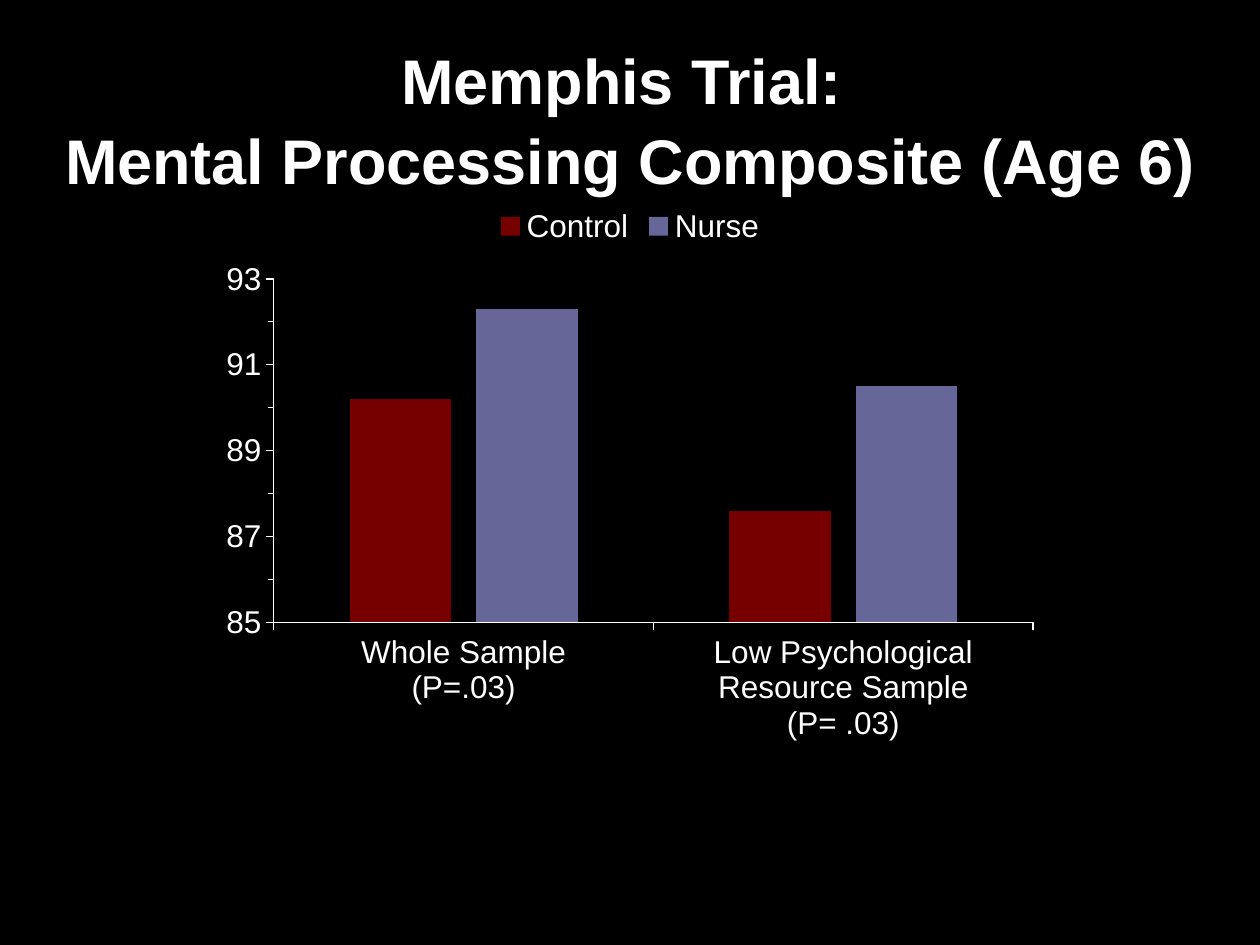
from dataclasses import dataclass

from lxml import etree
from pptx import Presentation
from pptx.chart.data import CategoryChartData
from pptx.dml.color import RGBColor
from pptx.enum.chart import XL_CHART_TYPE, XL_LEGEND_POSITION, XL_TICK_MARK
from pptx.enum.text import PP_ALIGN
from pptx.oxml.ns import qn
from pptx.util import Emu, Pt

PX = 914400 // 126  # one px in EMU
SLIDE_W, SLIDE_H = 1260, 945

BLACK = RGBColor(0x00, 0x00, 0x00)
WHITE = RGBColor(0xFF, 0xFF, 0xFF)
DARK_RED = RGBColor(0x76, 0x00, 0x00)
SLATE_BLUE = RGBColor(0x66, 0x66, 0x99)

CLUSTERED = XL_CHART_TYPE.COLUMN_CLUSTERED
LEGEND_TOP = XL_LEGEND_POSITION.TOP
TICK_OUT = XL_TICK_MARK.OUTSIDE
TICK_NONE = XL_TICK_MARK.NONE
CENTER = PP_ALIGN.CENTER


@dataclass(frozen=True)
class Box:
    left: int
    top: int
    width: int
    height: int

    def emu(self) -> list[Emu]:
        return [Emu(n * PX) for n in (self.left, self.top, self.width, self.height)]


@dataclass(frozen=True)
class Group:
    name: str
    scores: tuple[float, ...]
    color: RGBColor


TITLE_BOX = Box(32, 32, 1197, 165)
CHART_BOX = Box(210, 193, 840, 559)
PLOT_BOX = Box(274, 279, 759, 343)

SAMPLES = (
    "Whole Sample\n(P=.03)",
    "Low Psychological\nResource Sample\n(P= .03)",
)
GROUPS = (
    Group("Control", (90.2, 87.6), DARK_RED),
    Group("Nurse", (92.3, 90.5), SLATE_BLUE),
)


def set_font(font, size: int, bold: bool = False) -> None:
    font.name = "Arial"
    font.size = Pt(size)
    font.bold = bold
    font.color.rgb = WHITE


def add_text(slide, box: Box, lines: tuple[str, ...], *, size: int,
             bold: bool = False, spacing: float = 1.0) -> None:
    frame = slide.shapes.add_textbox(*box.emu()).text_frame
    frame.word_wrap = True
    for index, line in enumerate(lines):
        paragraph = frame.paragraphs[0] if index == 0 else frame.add_paragraph()
        paragraph.alignment = CENTER
        paragraph.line_spacing = spacing
        run = paragraph.add_run()
        run.text = line
        set_font(run.font, size, bold)


def place_plot(chart, outer: Box, inner: Box) -> None:
    """Fix the inner plot area as fractions of the chart frame."""
    plot_area = chart.plots[0]._element.getparent()
    layout = plot_area.find(qn("c:layout"))
    if layout is None:
        layout = etree.Element(qn("c:layout"))
        plot_area.insert(0, layout)
    manual = etree.SubElement(layout, qn("c:manualLayout"))
    settings = {
        "layoutTarget": "inner",
        "xMode": "edge",
        "yMode": "edge",
        "x": (inner.left - outer.left) / outer.width,
        "y": (inner.top - outer.top) / outer.height,
        "w": inner.width / outer.width,
        "h": inner.height / outer.height,
    }
    for tag, value in settings.items():
        text = value if isinstance(value, str) else f"{value:.3f}"
        etree.SubElement(manual, qn(f"c:{tag}")).set("val", text)


def add_score_chart(slide, box: Box, groups: tuple[Group, ...]) -> None:
    data = CategoryChartData()
    data.categories = SAMPLES
    for group in groups:
        data.add_series(group.name, group.scores)
    chart = slide.shapes.add_chart(CLUSTERED, *box.emu(), data).chart
    chart.has_title = False
    set_font(chart.font, 18)

    # Columns
    columns = chart.plots[0]
    columns.vary_by_categories = False
    columns.gap_width = 150
    columns.overlap = -25
    for series, group in zip(columns.series, groups):
        series.format.fill.solid()
        series.format.fill.fore_color.rgb = group.color

    # Axes
    for axis in (chart.category_axis, chart.value_axis):
        axis.has_major_gridlines = False
        axis.major_tick_mark = TICK_OUT
        axis.minor_tick_mark = TICK_NONE
        axis.format.line.color.rgb = WHITE
        axis.format.line.width = Pt(0.75)
        set_font(axis.tick_labels.font, 18)
    scores = chart.value_axis
    scores.minimum_scale, scores.maximum_scale = 85, 93
    scores.major_unit, scores.minor_unit = 2, 1
    scores.minor_tick_mark = TICK_OUT
    scores.tick_labels.number_format = "General"
    scores.tick_labels.number_format_is_linked = False

    # Legend
    chart.has_legend = True
    chart.legend.position = LEGEND_TOP
    chart.legend.include_in_layout = False
    set_font(chart.legend.font, 18)

    place_plot(chart, box, PLOT_BOX)


def main() -> None:
    deck = Presentation()
    deck.slide_width, deck.slide_height = Emu(SLIDE_W * PX), Emu(SLIDE_H * PX)
    slide = deck.slides.add_slide(deck.slide_layouts[6])
    slide.background.fill.solid()
    slide.background.fill.fore_color.rgb = BLACK

    # Title
    add_text(slide, TITLE_BOX,
             ("Memphis Trial: ", "Mental Processing Composite (Age 6)"),
             size=36, bold=True, spacing=1.05)

    # Scores by sample
    add_score_chart(slide, CHART_BOX, GROUPS)

    deck.save("out.pptx")


if __name__ == "__main__":
    main()
